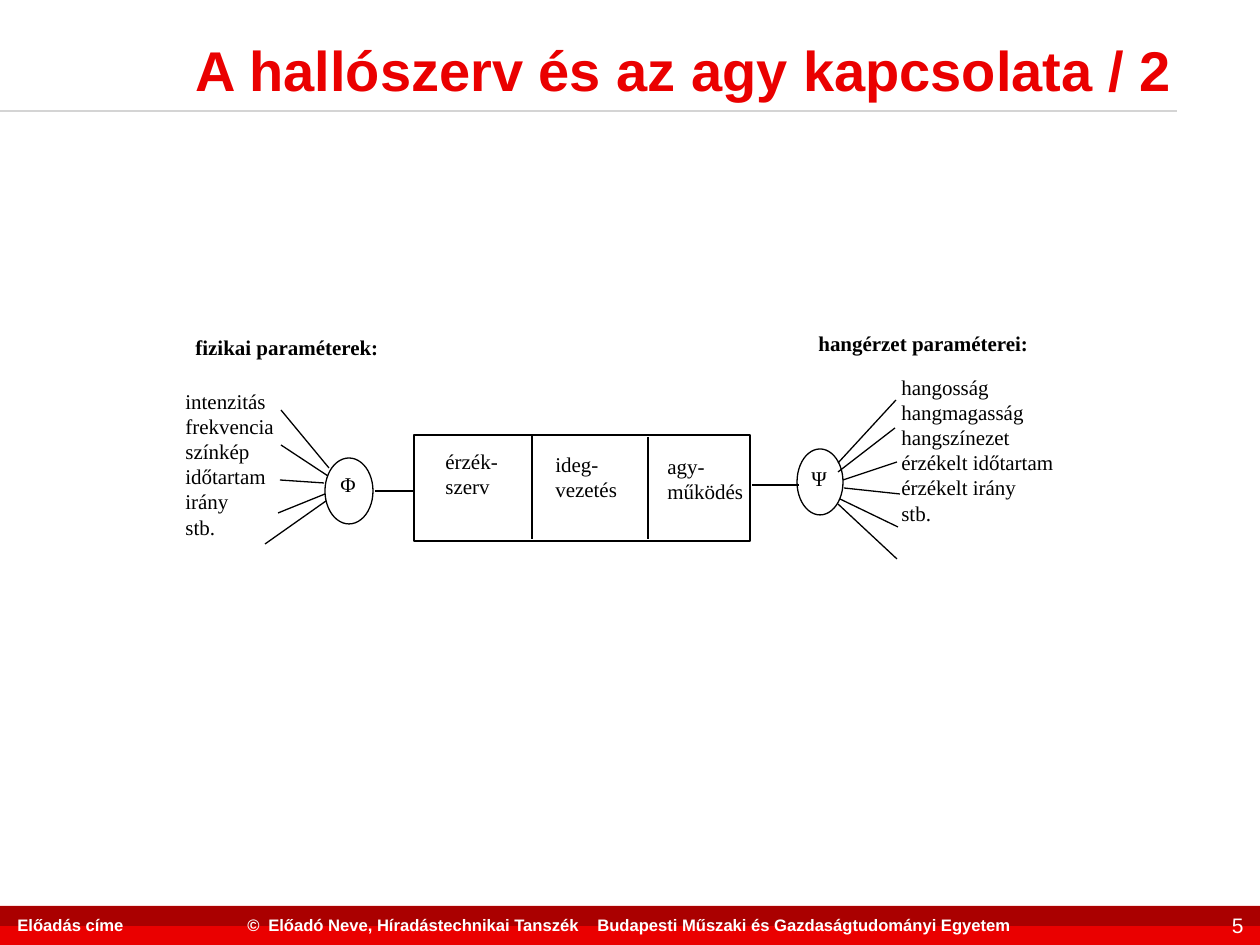
from lxml.etree import SubElement
from pptx import Presentation
from pptx.dml.color import RGBColor
from pptx.enum.shapes import MSO_CONNECTOR as Connector, MSO_SHAPE as Shape
from pptx.enum.text import MSO_ANCHOR as Anchor, PP_ALIGN as Align
from pptx.oxml.ns import qn
from pptx.util import Emu, Pt

PX = 914400 / 126
COLORS = {"red": "EA0000", "dark red": "AA0000", "gray": "D4D4D4",
          "black": "000000", "white": "FFFFFF"}


def px(*lengths):
    return [Emu(round(length * PX)) for length in lengths]


def write(shape, text, font="Times New Roman", size=12, bold=False, color="black",
          align=Align.LEFT, anchor=Anchor.TOP, spacing=Pt(14.4), tabs=()):
    frame = shape.text_frame
    frame.word_wrap = True
    frame.vertical_anchor = anchor
    frame.text = text
    for paragraph in frame.paragraphs:
        paragraph.alignment = align
        paragraph.line_spacing = spacing
        if tabs:
            tab_list = SubElement(paragraph._p.get_or_add_pPr(), qn("a:tabLst"))
            for position in px(*tabs):
                SubElement(tab_list, qn("a:tab"), pos=str(position), algn="l")
        paragraph.font.name = font
        paragraph.font.size = Pt(size)
        paragraph.font.bold = bold
        paragraph.font.color.rgb = RGBColor.from_string(COLORS[color])


presentation = Presentation()
presentation.slide_width, presentation.slide_height = px(1260, 945)
slide = presentation.slides.add_slide(presentation.slide_layouts[5])
shapes = slide.shapes

title = shapes.title
title.left, title.top, title.width, title.height = px(183, 45, 1026, 48)
write(title, "A hallószerv és az agy kapcsolata / 2", font="Arial", size=32, bold=True,
      color="red", anchor=Anchor.MIDDLE, spacing=1.0)

for kind, box, fill, outline in [
    (Shape.RECTANGLE, (0, 906, 1260, 39), "red", None),
    (Shape.RECTANGLE, (0, 906, 1260, 20), "dark red", None),
    (Shape.RECTANGLE, (414, 435, 336, 106), None, "black"),
    (Shape.OVAL, (325, 458, 48, 66), "white", "black"),
    (Shape.OVAL, (797, 449, 46, 66), "white", "black"),
]:
    shape = shapes.add_shape(kind, *px(*box))
    shape.shadow.inherit = False
    if fill:
        shape.fill.solid()
        shape.fill.fore_color.rgb = RGBColor.from_string(COLORS[fill])
    else:
        shape.fill.background()
    if outline:
        shape.line.color.rgb = RGBColor.from_string(COLORS[outline])
        shape.line.width = Pt(0.75)
    else:
        shape.line.fill.background()

title_rule = [(0, 111, 1177, 111)]
dividers = [(532, 435, 532, 539), (648, 437, 648, 539)]
links = [(375, 491, 414, 491), (752, 485, 799, 485)]
input_rays = [(281, 410, 329, 468), (281, 445, 328, 476), (280, 480, 324, 483),
              (278, 513, 325, 494), (265, 544, 326, 501)]
output_rays = [(838, 463, 896, 400), (838, 472, 895, 428), (843, 480, 897, 462),
               (844, 488, 900, 494), (840, 499, 898, 527), (838, 504, 897, 559)]

for color, width, lines in [
    ("gray", 1.5, title_rule),
    ("black", 0.75, dividers + links + input_rays + output_rays),
]:
    for ends in lines:
        line = shapes.add_connector(Connector.STRAIGHT, *px(*ends))
        line.line.color.rgb = RGBColor.from_string(COLORS[color])
        line.line.width = Pt(width)
        SubElement(line._element.spPr, qn("a:effectLst"))

footer = {"font": "Arial", "color": "white", "anchor": Anchor.MIDDLE, "spacing": 1.0}
small = {**footer, "size": 9.5, "bold": True}

for box, text, style in [
    ((183, 328, 227, 44), "fizikai paraméterek:", {"bold": True}),
    ((806, 324, 242, 84), "hangérzet paraméterei:", {"bold": True}),
    ((173, 382, 118, 217),
     "intenzitás\nfrekvencia\nszínkép\nidőtartam\nirány\nstb.", {}),
    ((889, 368, 190, 197),
     "hangosság\nhangmagasság\nhangszínezet\nérzékelt időtartam\nérzékelt irány\nstb.", {}),
    ((328, 465, 44, 55), "Φ", {}),
    ((799, 459, 54, 59), "Ψ", {}),
    ((433, 442, 80, 87), "érzék-\nszerv", {}),
    ((543, 445, 90, 87), "ideg-vezetés", {}),
    ((655, 447, 110, 84), "agy-működés", {}),
    ((5, 905, 370, 40), "Előadás címe", small),
    ((235, 905, 820, 40),
     "©\tElőadó Neve, Híradástechnikai Tanszék\tBudapesti Műszaki és Gazdaságtudományi Egyetem",
     {**small, "tabs": (21, 350)}),
    ((1165, 905, 91, 40), "5", {**footer, "align": Align.RIGHT}),
]:
    write(shapes.add_textbox(*px(*box)), text, **style)

presentation.save("out.pptx")
